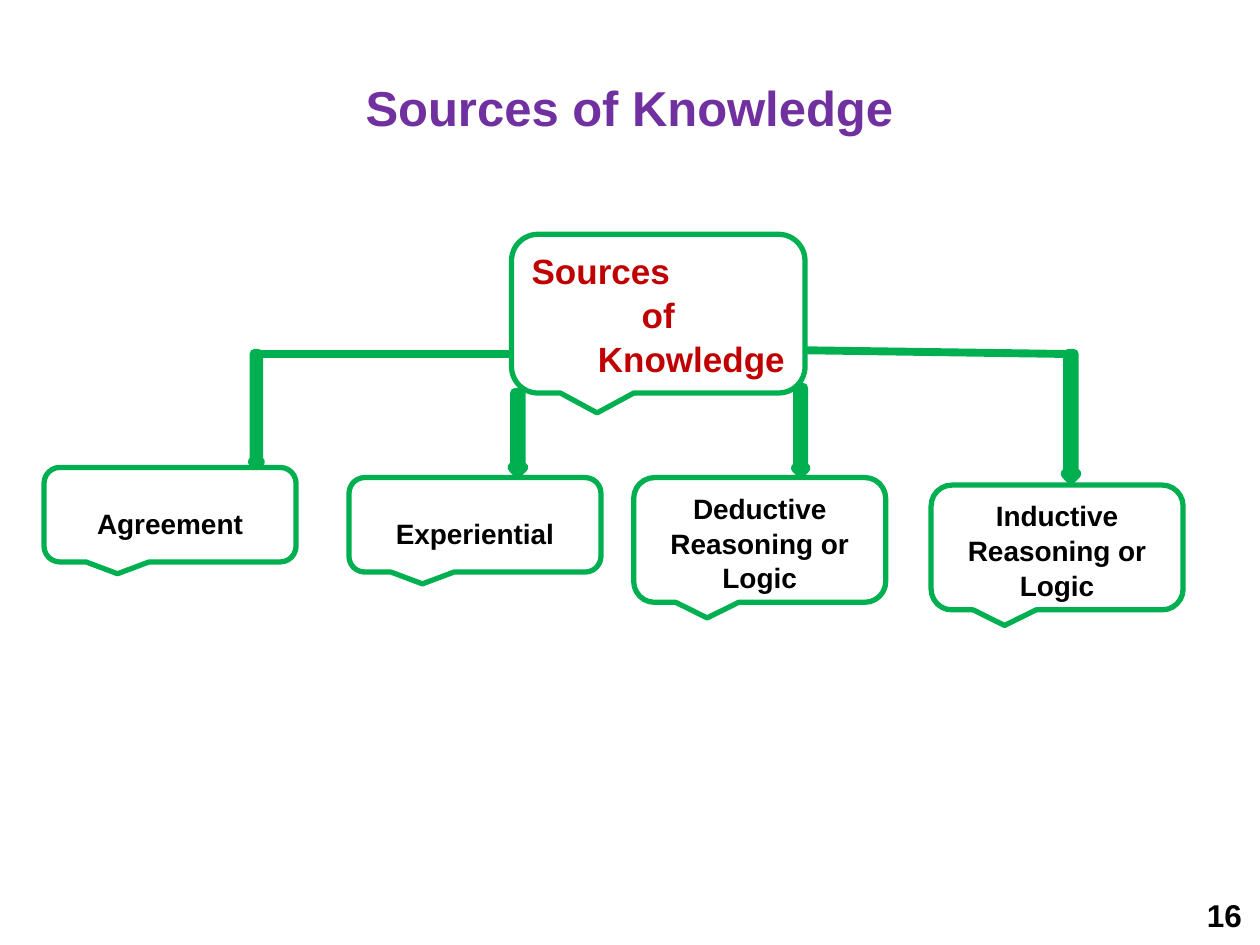
from dataclasses import dataclass

from lxml.etree import SubElement
from pptx import Presentation
from pptx.dml.color import RGBColor
from pptx.enum.shapes import MSO_CONNECTOR, MSO_SHAPE
from pptx.enum.text import MSO_ANCHOR, PP_ALIGN
from pptx.oxml.ns import qn
from pptx.util import Inches, Pt

COLS = 100
HUES = {"title": "7030A0", "edge": "00B050", "core": "C00000", "text": "000000", "arrow": "95AEFC"}
LEFT, MID, RIGHT = PP_ALIGN.LEFT, PP_ALIGN.CENTER, PP_ALIGN.RIGHT

deck = Presentation()
deck.slide_width, deck.slide_height = Inches(10), Inches(7.5)
UNIT = deck.slide_width // COLS


@dataclass
class Box:
    """Place on a grid of 100 columns and 75 rows."""

    col: float
    row: float
    wide: float
    high: float

    def span(self) -> list[int]:
        """Give left, top, width and height in EMU."""
        return [round(n * UNIT) for n in (self.col, self.row, self.wide, self.high)]


@dataclass
class Node:
    """Callout with its lines of text."""

    box: Box
    lines: list[tuple[str, PP_ALIGN]]
    size: int = 16
    hue: str = "text"
    drop: float = 0.05


def paint(hue: str) -> RGBColor:
    """Look up a colour by its role."""
    return RGBColor.from_string(HUES[hue])


def assign(item: object, form: dict) -> None:
    """Set each format value on an item."""
    for key, value in form.items():
        setattr(item, key, value)


def write(frame, lines: list, size: int, hue: str, space: float) -> None:
    """Fill a text frame, one paragraph to a line."""
    for nth, (words, side) in enumerate(lines):
        para = frame.add_paragraph() if nth else frame.paragraphs[0]
        assign(para, {"alignment": side, "line_spacing": space})
        run = para.add_run()
        run.text = words
        assign(run.font, {"name": "Arial", "size": Pt(size), "bold": True})
        run.font.color.rgb = paint(hue)


def trace(line, width: float) -> None:
    """Give a line the green edge."""
    line.color.rgb = paint("edge")
    line.width = Pt(width)


def draw_node(slide, node: Node) -> None:
    """Draw one callout."""
    shape = slide.shapes.add_shape(MSO_SHAPE.ROUNDED_RECTANGULAR_CALLOUT, *node.box.span())
    shape.shadow.inherit = False
    shape.fill.background()
    trace(shape.line, 3)
    form = {"word_wrap": True, "vertical_anchor": MSO_ANCHOR.TOP, "margin_top": Inches(node.drop)}
    assign(shape.text_frame, form)
    write(shape.text_frame, node.lines, node.size, node.hue, 1.04)


def draw_arrow(slide, box: Box) -> None:
    """Draw one thick arrow pointing down."""
    shape = slide.shapes.add_shape(MSO_SHAPE.DOWN_ARROW, *box.span())
    shape.shadow.inherit = False
    shape.fill.solid()
    shape.fill.fore_color.rgb = paint("arrow")
    trace(shape.line, 6)
    SubElement(shape.line._get_or_add_ln(), qn("a:round"))


def draw_arm(slide, ends: tuple[float, ...]) -> None:
    """Draw one straight line from the core."""
    arm = slide.shapes.add_connector(MSO_CONNECTOR.STRAIGHT, *(round(n * UNIT) for n in ends))
    trace(arm.line, 4.5)
    SubElement(arm._element.spPr, qn("a:effectLst"))


NODES = [
    Node(Box(3.5, 37.1, 20, 7.5), [("Agreement", MID)], drop=0.26),
    Node(Box(27.7, 37.9, 20, 7.5), [("Experiential", MID)], drop=0.26),
    Node(Box(50.3, 37.9, 20, 9.9), [("Deductive Reasoning or Logic", MID)]),
    Node(Box(73.9, 38.5, 20, 9.9), [("Inductive Reasoning or Logic", MID)]),
    Node(
        Box(40.6, 18.6, 23.3, 12.6),
        [("Sources", LEFT), ("of", MID), ("Knowledge", RIGHT)],
        size=20,
        hue="core",
    ),
]
ARROWS = [
    Box(63.2, 30.8, 0.7, 6.7),
    Box(20.1, 28.1, 0.5, 8.8),
    Box(84.6, 28.1, 0.8, 9.9),
    Box(40.7, 31.2, 0.8, 6.3),
]
ARMS = [(20.3, 28.1, 40.6, 28.1), (63.9, 27.8, 85, 28.1)]


def main() -> None:
    """Build and save the slide."""
    slide = deck.slides.add_slide(deck.slide_layouts[5])
    title = slide.shapes.title
    spot = Box(10.8, 4.4, 78.3, 8.7).span()
    assign(title, dict(zip(("left", "top", "width", "height"), spot)))
    title.text_frame.vertical_anchor = MSO_ANCHOR.MIDDLE
    write(title.text_frame, [("Sources of Knowledge", MID)], 28, "title", 0.9)
    for node in NODES:
        draw_node(slide, node)
    for box in ARROWS:
        draw_arrow(slide, box)
    for ends in ARMS:
        draw_arm(slide, ends)
    page = slide.shapes.add_textbox(*Box(94.8, 70.6, 5, 4).span())
    page.text_frame.word_wrap = False
    write(page.text_frame, [("16", LEFT)], 18, "text", 1.0)
    deck.save("out.pptx")


if __name__ == "__main__":
    main()
